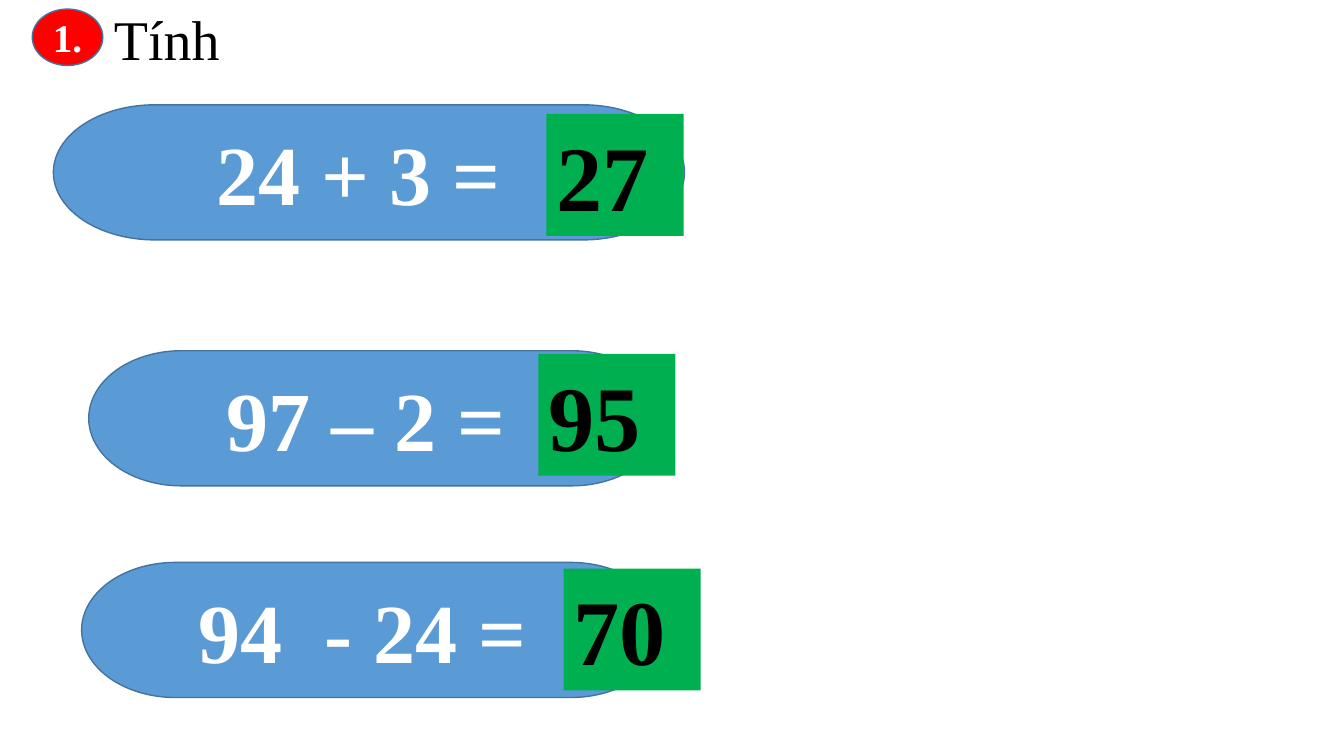
from pptx import Presentation
from pptx.dml.color import RGBColor as RGB
from pptx.enum.shapes import MSO_SHAPE as Kind
from pptx.enum.text import MSO_ANCHOR as Anchor, MSO_AUTO_SIZE as Fit, PP_ALIGN as Align
from pptx.util import Pt

PX = 9144
FONT = "Times New Roman"
WHITE = RGB(0xFF, 0xFF, 0xFF)
BLACK = RGB(0, 0, 0)
BLUE = RGB(0x5B, 0x9B, 0xD5)
EDGE = RGB(0x43, 0x73, 0x9E)
RED = RGB(0xFF, 0, 0)
GREEN = RGB(0, 0xB0, 0x50)

SUMS = [
    ("24 + 3 = ", (53, 104, 626), "27", (542, 113)),
    ("97 – 2 = ", (88, 348, 571), "95", (534, 351)),
    ("94  - 24 = ", (81, 558, 578), "70", (559, 564)),
]


def emu(*sizes):
    return [size * PX for size in sizes]


def write(shape, text, size, color, bold, align, anchor):
    frame = shape.text_frame
    frame.word_wrap = True
    frame.auto_size = Fit.NONE
    frame.vertical_anchor = anchor
    para = frame.paragraphs[0]
    para.alignment = align
    run = para.add_run()
    run.text = text
    font = run.font
    font.name = FONT
    font.size = Pt(size)
    font.bold = bold
    font.color.rgb = color


def draw(slide, kind, box, fill, edge=None):
    shape = slide.shapes.add_shape(kind, *emu(*box))
    shape.shadow.inherit = False
    shape.fill.solid()
    shape.fill.fore_color.rgb = fill
    if edge is None:
        shape.line.fill.background()
    else:
        shape.line.color.rgb = edge
        shape.line.width = Pt(1)
    return shape


def add_title(slide, text):
    title = slide.shapes.title
    title.left, title.top, title.width, title.height = emu(103, -1, 445, 77)
    write(title, text, 40, BLACK, False, Align.LEFT, Anchor.TOP)


def add_badge(slide, text):
    badge = draw(slide, Kind.OVAL, (32, 9, 70, 56), RED, EDGE)
    write(badge, text, 28, WHITE, True, Align.CENTER, Anchor.MIDDLE)


def add_sum(slide, text, left, top, width):
    pill = draw(slide, Kind.FLOWCHART_TERMINATOR, (left, top, width, 134), BLUE, EDGE)
    write(pill, text, 60, WHITE, True, Align.CENTER, Anchor.MIDDLE)


def add_answer(slide, text, left, top):
    card = draw(slide, Kind.RECTANGLE, (left, top, 136, 121), GREEN)
    write(card, text, 66, BLACK, True, Align.LEFT, Anchor.TOP)


def main():
    deck = Presentation()
    deck.slide_width, deck.slide_height = emu(1333, 750)
    slide = deck.slides.add_slide(deck.slide_layouts[5])
    add_title(slide, "Tính")
    add_badge(slide, "1.")
    for task, place, answer, spot in SUMS:
        add_sum(slide, task, *place)
        add_answer(slide, answer, *spot)
    deck.save("out.pptx")


if __name__ == "__main__":
    main()
